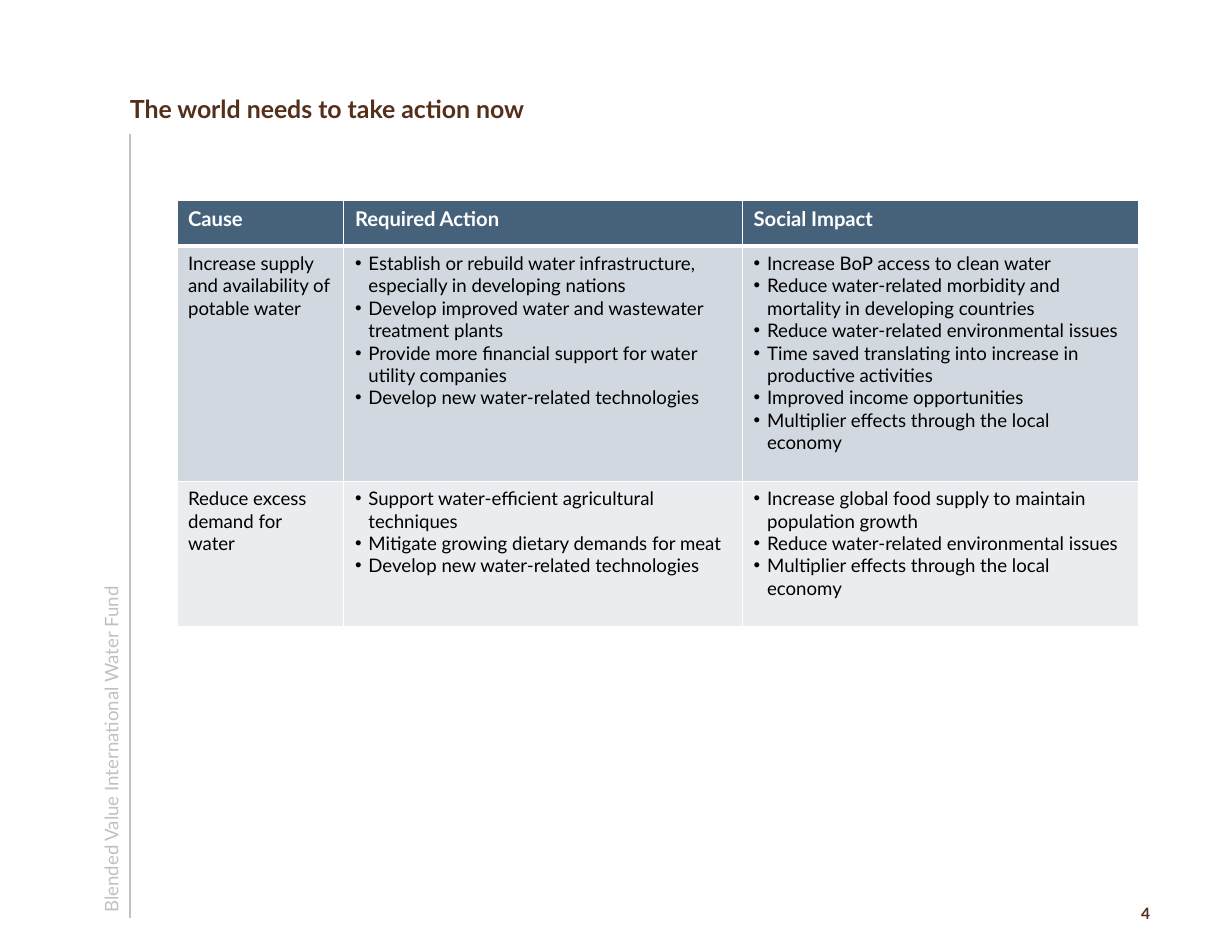
from lxml.etree import SubElement
from pptx import Presentation
from pptx.dml.color import RGBColor
from pptx.enum.shapes import MSO_CONNECTOR
from pptx.enum.text import MSO_ANCHOR
from pptx.oxml.ns import qn
from pptx.util import Inches, Pt

WIDTH, HEIGHT = Inches(11), Inches(8.5)
BROWN, GREY, WHITE, BLACK = "54301A", "C1C1BD", "FFFFFF", "000000"
SLATE, MIST, PALE = "46627B", "D2D8E0", "EAEDF0"
RULE_X = 10.55

# Column widths and row heights, in percent of the slide
COLUMNS = [13.55, 32.36, 32.18]
ROWS = [4.82, 24.71, 15.29]
ROW_FILLS = [SLATE, MIST, PALE]

HEADINGS = ["Cause", "Required Action", "Social Impact"]
ENVIRONMENT = "Reduce water-related environmental issues"
MULTIPLIER = "Multiplier effects through the local economy"
TECHNOLOGIES = "Develop new water-related technologies"
CAUSES = [
    ("Increase supply and availability of potable water",
     ["Establish or rebuild water infrastructure, especially in developing nations",
      "Develop improved water and wastewater treatment plants",
      "Provide more financial support for water utility companies",
      TECHNOLOGIES],
     ["Increase BoP access to clean water",
      "Reduce water-related morbidity and mortality in developing countries",
      ENVIRONMENT,
      "Time saved translating into increase in productive activities",
      "Improved income opportunities",
      MULTIPLIER]),
    ("Reduce excess demand for water",
     ["Support water-efficient agricultural techniques",
      "Mitigate growing dietary demands for meat",
      TECHNOLOGIES],
     ["Increase global food supply to maintain population growth",
      ENVIRONMENT,
      MULTIPLIER]),
]


def across(percent):
    return int(WIDTH * percent / 100)


def down(percent):
    return int(HEIGHT * percent / 100)


def colour(hex_value):
    return RGBColor.from_string(hex_value)


def apply_format(target, values):
    for name, value in values.items():
        setattr(target, name, value)


def write(paragraph, text, size, hex_value, bold=False):
    run = paragraph.add_run()
    run.text = text
    apply_format(run.font, {"name": "Lato", "size": Pt(size), "bold": bold})
    run.font.color.rgb = colour(hex_value)


def add_label(slide, place, text, size, hex_value, bold=False, rotation=0, **frame_format):
    left, top, width, height = place
    label = slide.shapes.add_textbox(across(left), down(top), across(width), down(height))
    label.rotation = rotation
    apply_format(label.text_frame, {"word_wrap": True, **frame_format})
    write(label.text_frame.paragraphs[0], text, size, hex_value, bold)


def add_rule(slide, x, top, bottom):
    rule = slide.shapes.add_connector(
        MSO_CONNECTOR.STRAIGHT, across(x), down(bottom), across(x), down(top))
    rule.line.color.rgb = colour(GREY)
    rule.line.width = Pt(0.75)
    SubElement(rule._element.spPr, qn("a:effectLst"))


def add_bullet(paragraph):
    properties = paragraph._p.get_or_add_pPr()
    indent = Inches(0.12)
    properties.set("marL", str(indent))
    properties.set("indent", str(-indent))
    SubElement(properties, qn("a:buFont"), typeface="Arial")
    SubElement(properties, qn("a:buChar"), char="•")


def set_borders(cell, widths):
    properties = cell._tc.get_or_add_tcPr()
    for side, width in widths.items():
        border = SubElement(properties, qn(f"a:ln{side}"), w=str(Pt(width)))
        fill = SubElement(border, qn("a:solidFill"))
        SubElement(fill, qn("a:srgbClr"), val=WHITE)


def fill_cell(cell, content, row):
    header = row == 0
    set_borders(cell, {"L": 1, "R": 1, "T": 3 if row == 1 else 1, "B": 3 if header else 1})
    cell.fill.solid()
    cell.fill.fore_color.rgb = colour(ROW_FILLS[row])
    bulleted = isinstance(content, list)
    frame = cell.text_frame
    for index, text in enumerate(content if bulleted else [content]):
        paragraph = frame.add_paragraph() if index else frame.paragraphs[0]
        if bulleted:
            add_bullet(paragraph)
        write(paragraph, text, 13 if header else 12, WHITE if header else BLACK, header)


def add_action_table(slide):
    table = slide.shapes.add_table(
        len(ROWS), len(COLUMNS), across(14.36), down(21.06),
        across(sum(COLUMNS)), down(sum(ROWS))).table
    for column, width in zip(table.columns, COLUMNS):
        column.width = across(width)
    for row, height in zip(table.rows, ROWS):
        row.height = down(height)
    for row, contents in enumerate([HEADINGS, *CAUSES]):
        for column, content in enumerate(contents):
            fill_cell(table.cell(row, column), content, row)


def main():
    deck = Presentation()
    apply_format(deck, {"slide_width": WIDTH, "slide_height": HEIGHT})
    slide = deck.slides.add_slide(deck.slide_layouts[6])
    flush = {"margin_left": 0, "margin_right": 0, "margin_top": 0, "margin_bottom": 0}

    # Page frame: side rule, page number and fund name
    add_rule(slide, RULE_X, 14.12, 96.47)
    add_label(slide, (91.73, 94.35, 3.45, 3.18), "4", 10, BROWN, bold=True)
    add_label(slide, (-16.18, 62.59, 50.36, 2.35), "Blended Value International Water Fund",
              12, GREY, rotation=270, **{**flush, "margin_left": Inches(0.04)})

    # Title
    add_label(slide, (RULE_X, 4.12, 82.82, 8.82), "The world needs to take action now",
              16, BROWN, bold=True, vertical_anchor=MSO_ANCHOR.BOTTOM, **flush)

    # Causes, actions and impacts
    add_action_table(slide)
    deck.save("out.pptx")


if __name__ == "__main__":
    main()
